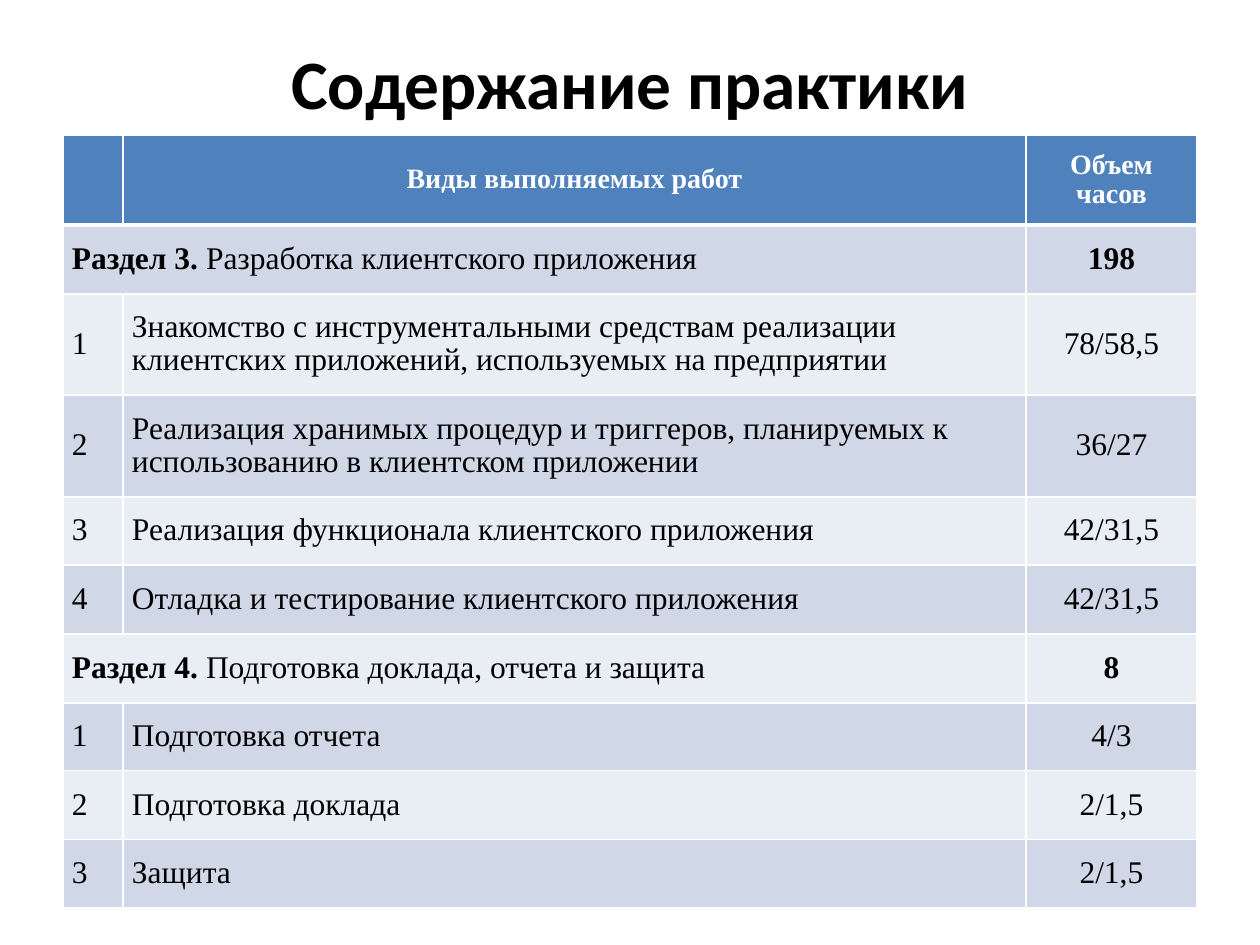
from lxml import etree
from pptx import Presentation
from pptx.dml.color import RGBColor
from pptx.enum.text import MSO_ANCHOR, PP_ALIGN
from pptx.oxml.ns import qn
from pptx.util import Emu, Pt

LEFT, CENTER = PP_ALIGN.LEFT, PP_ALIGN.CENTER
MIDDLE = MSO_ANCHOR.MIDDLE

TITLE = "Содержание практики"
HEADER = ("", "Виды выполняемых работ", "Объем часов")
ROWS = [
    ("Раздел 3. ", "Разработка клиентского приложения", "198"),
    ("1", "Знакомство с инструментальными средствам реализации "
          "клиентских приложений, используемых на предприятии", "78/58,5"),
    ("2", "Реализация хранимых процедур и триггеров, планируемых к "
          "использованию в клиентском приложении", "36/27"),
    ("3", "Реализация функционала клиентского приложения", "42/31,5"),
    ("4", "Отладка и тестирование клиентского приложения", "42/31,5"),
    ("Раздел 4. ", "Подготовка доклада, отчета и защита", "8"),
    ("1", "Подготовка отчета", "4/3"),
    ("2", "Подготовка доклада", "2/1,5"),
    ("3", "Защита", "2/1,5"),
]
COL_W = (60, 903, 171)
ROW_H = (90, 69, 101, 102, 68, 69, 69, 68, 69, 68)
BLUE, BANDS = "4F81BD", ("D0D8E8", "E9EDF4")
WHITE, BLACK = "FFFFFF", "000000"


def px(n):
    return Emu(n * 914400 // 126)


def rgb(value):
    return RGBColor.from_string(value)


def style(p, font, size, color, bold, align):
    p.alignment = align
    p.font.name = font
    p.font.size = Pt(size)
    p.font.bold = bold
    p.font.color.rgb = rgb(color)


def add_borders(cell, bottom):
    tcPr = cell._tc.get_or_add_tcPr()
    widths = (("lnL", 1), ("lnR", 1), ("lnT", 1), ("lnB", bottom))
    for i, (tag, width) in enumerate(widths):
        ln = etree.Element(qn(f"a:{tag}"), w=str(Pt(width)))
        fill = etree.SubElement(ln, qn("a:solidFill"))
        etree.SubElement(fill, qn("a:srgbClr"), val=WHITE)
        tcPr.insert(i, ln)


def fill_cell(cell, runs, color, size, text_color, bold, align, bottom=1):
    cell.fill.solid()
    cell.fill.fore_color.rgb = rgb(color)
    cell.vertical_anchor = MIDDLE
    cell.margin_left = cell.margin_right = px(9)
    cell.margin_top = cell.margin_bottom = 0
    add_borders(cell, bottom)
    p = cell.text_frame.paragraphs[0]
    style(p, "Times New Roman", size, text_color, bold, align)
    p.line_spacing = 0.95
    for text in runs:
        p.add_run().text = text


prs = Presentation()
prs.slide_width, prs.slide_height = px(1260), px(945)
s = prs.slides.add_slide(prs.slide_layouts[6])

tf = s.shapes.add_textbox(px(63), px(38), px(1134), px(87)).text_frame
tf.word_wrap = True
tf.vertical_anchor = MIDDLE
p = tf.paragraphs[0]
p.text = TITLE
style(p, "Calibri", 39.6, BLACK, True, CENTER)

table = s.shapes.add_table(len(ROW_H), len(COL_W), px(63), px(135),
                           px(sum(COL_W)), px(sum(ROW_H))).table
for col, width in zip(table.columns, COL_W):
    col.width = px(width)
for row, height in zip(table.rows, ROW_H):
    row.height = px(height)

for c, text in enumerate(HEADER):
    fill_cell(table.cell(0, c), [text] if text else [], BLUE, 16, WHITE,
              True, CENTER, bottom=3)

for r, (label, work, hours) in enumerate(ROWS, 1):
    band = BANDS[(r - 1) % 2]
    is_section = not label.isdigit()
    first, second = table.cell(r, 0), table.cell(r, 1)
    if is_section:
        first.merge(second)
        fill_cell(first, [label, work], band, 18, BLACK, False, LEFT)
        first.text_frame.paragraphs[0].runs[0].font.bold = True
    else:
        fill_cell(first, [label], band, 18, BLACK, False, LEFT)
        fill_cell(second, [work], band, 18, BLACK, False, LEFT)
    fill_cell(table.cell(r, 2), [hours], band, 18, BLACK, is_section, CENTER)

prs.save("out.pptx")
